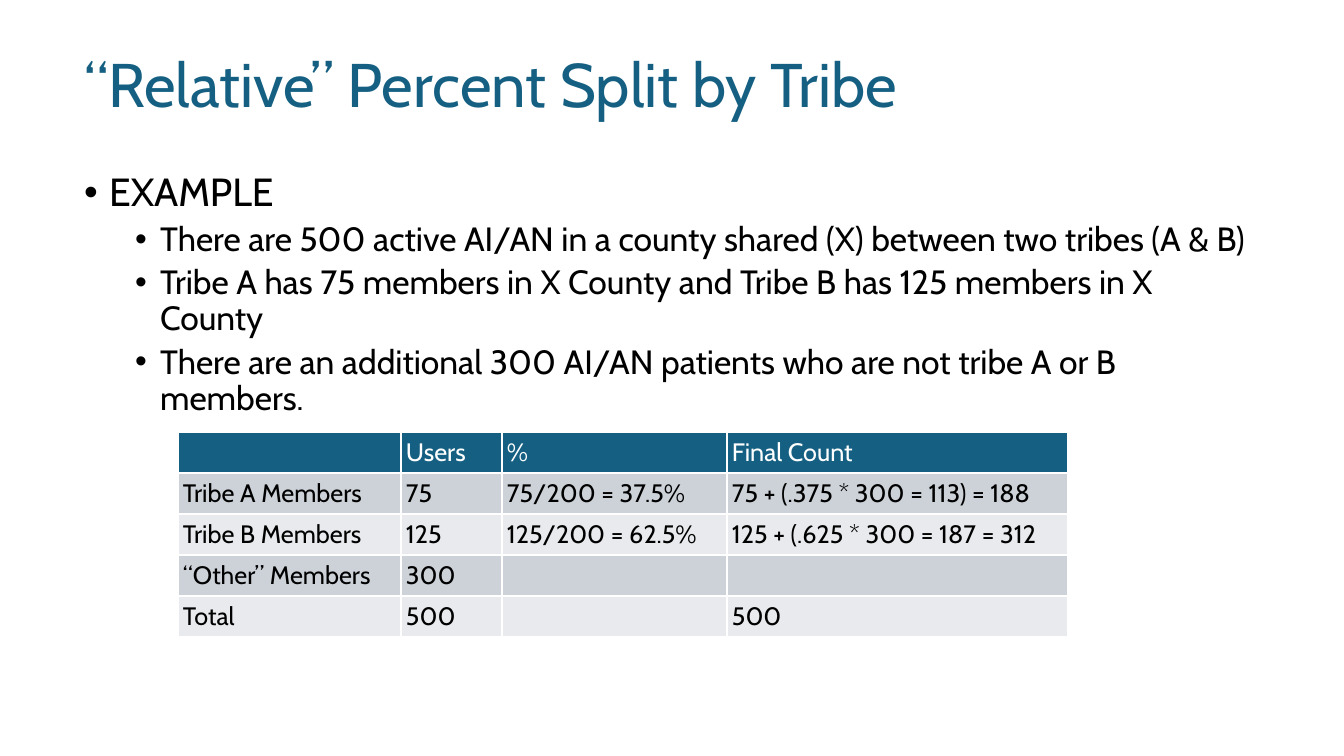
from lxml.etree import SubElement
from pptx import Presentation
from pptx.dml.color import RGBColor
from pptx.enum.text import MSO_ANCHOR as Anchor, MSO_AUTO_SIZE as AutoSize, PP_ALIGN as Align
from pptx.oxml.ns import qn
from pptx.util import Pt

TITLE = "“Relative” Percent Split by Tribe"
BULLETS = [
    (0, "EXAMPLE"),
    (1, "There are 500 active AI/AN in a county shared (X) between two tribes (A & B)"),
    (1, "Tribe A has 75 members in X County and Tribe B has 125 members in X County"),
    (1, "There are an additional 300 AI/AN patients who are not tribe A or B members."),
]
COUNTS = [
    ("", "Users", "%", "Final Count"),
    ("Tribe A Members", "75", "75/200 = 37.5%", "75 + (.375 * 300 = 113) = 188"),
    ("Tribe B Members", "125", "125/200 = 62.5%", "125 + (.625 * 300 = 187 = 312"),
    ("“Other” Members", "300", "", ""),
    ("Total", "500", "", "500"),
]
COLUMN_WIDTHS = (223, 101, 225, 341)
ROW_HEIGHT = 41
CELL_INSET = 5
LEVEL_STYLES = [{"size": 28, "indent": 25, "before": 0}, {"size": 24, "indent": 76, "before": 5}]
BULLET_HANG = 25
FONT = "Cabin"
TEAL, BLACK, WHITE = "156082", "000000", "FFFFFF"
BANDS = ("E8EAED", "CCD2D8")
SLIDE_SIZE = (1344, 756)
TITLE_BOX = (74, 48, 1064, 79)
BODY_BOX = (74, 168, 1197, 219)
TABLE_ORIGIN = (178, 432)


def px(length):
    """Turn px into EMU."""
    return round(length * 914400 / 100.8)


def rgb(code):
    """Turn a hex string into a colour."""
    return RGBColor.from_string(code)


def write(paragraph, text, size=18, color=BLACK, before=0, spacing=1.0, indent=None):
    """Fill a paragraph with formatted text, bulleted when an indent is given."""
    if indent is not None:
        properties = paragraph._p.get_or_add_pPr()
        properties.set("marL", str(px(indent)))
        properties.set("indent", str(-px(BULLET_HANG)))
        SubElement(properties, qn("a:buFont"), typeface="Arial")
        SubElement(properties, qn("a:buChar"), char="•")
    paragraph.alignment = Align.LEFT
    paragraph.line_spacing = spacing
    paragraph.space_before = Pt(before)
    if text:
        run = paragraph.add_run()
        run.text = text
        run.font.name, run.font.size, run.font.bold = FONT, Pt(size), False
        run.font.color.rgb = rgb(color)


def place(placeholder, box, anchor):
    """Move a placeholder and return its text frame."""
    placeholder.left, placeholder.top, placeholder.width, placeholder.height = map(px, box)
    frame = placeholder.text_frame
    frame.word_wrap, frame.auto_size, frame.vertical_anchor = True, AutoSize.NONE, anchor
    return frame


def outline(cell):
    """Draw thin white borders around a cell."""
    properties = cell._tc.get_or_add_tcPr()
    for side in ("lnL", "lnR", "lnT", "lnB"):
        border = SubElement(properties, qn(f"a:{side}"), w=str(Pt(1)))
        SubElement(SubElement(border, qn("a:solidFill")), qn("a:srgbClr"), val=WHITE)


def add_counts(slide):
    """Add the table of users and final counts."""
    size = (sum(COLUMN_WIDTHS), ROW_HEIGHT * len(COUNTS))
    table = slide.shapes.add_table(
        len(COUNTS), len(COLUMN_WIDTHS), *map(px, TABLE_ORIGIN + size)).table
    for column, width in zip(table.columns, COLUMN_WIDTHS):
        column.width = px(width)
    for r, counts in enumerate(COUNTS):
        table.rows[r].height = px(ROW_HEIGHT)
        for c, text in enumerate(counts):
            cell = table.cell(r, c)
            cell.margin_left = cell.margin_right = px(CELL_INSET)
            cell.margin_top = cell.margin_bottom = px(CELL_INSET)
            outline(cell)
            cell.fill.solid()
            cell.fill.fore_color.rgb = rgb(BANDS[r % 2] if r else TEAL)
            write(cell.text_frame.paragraphs[0], text, color=BLACK if r else WHITE)


def main():
    """Build and save the slide."""
    deck = Presentation()
    deck.slide_width, deck.slide_height = map(px, SLIDE_SIZE)
    slide = deck.slides.add_slide(deck.slide_layouts[1])
    title = place(slide.shapes.title, TITLE_BOX, Anchor.MIDDLE)
    write(title.paragraphs[0], TITLE, size=44, color=TEAL, spacing=0.9)
    body = place(slide.placeholders[1], BODY_BOX, Anchor.TOP)
    for i, (level, text) in enumerate(BULLETS):
        paragraph = body.add_paragraph() if i else body.paragraphs[0]
        paragraph.level = level
        write(paragraph, text, spacing=0.9, **LEVEL_STYLES[level])
    add_counts(slide)
    deck.save("out.pptx")


if __name__ == "__main__":
    main()
